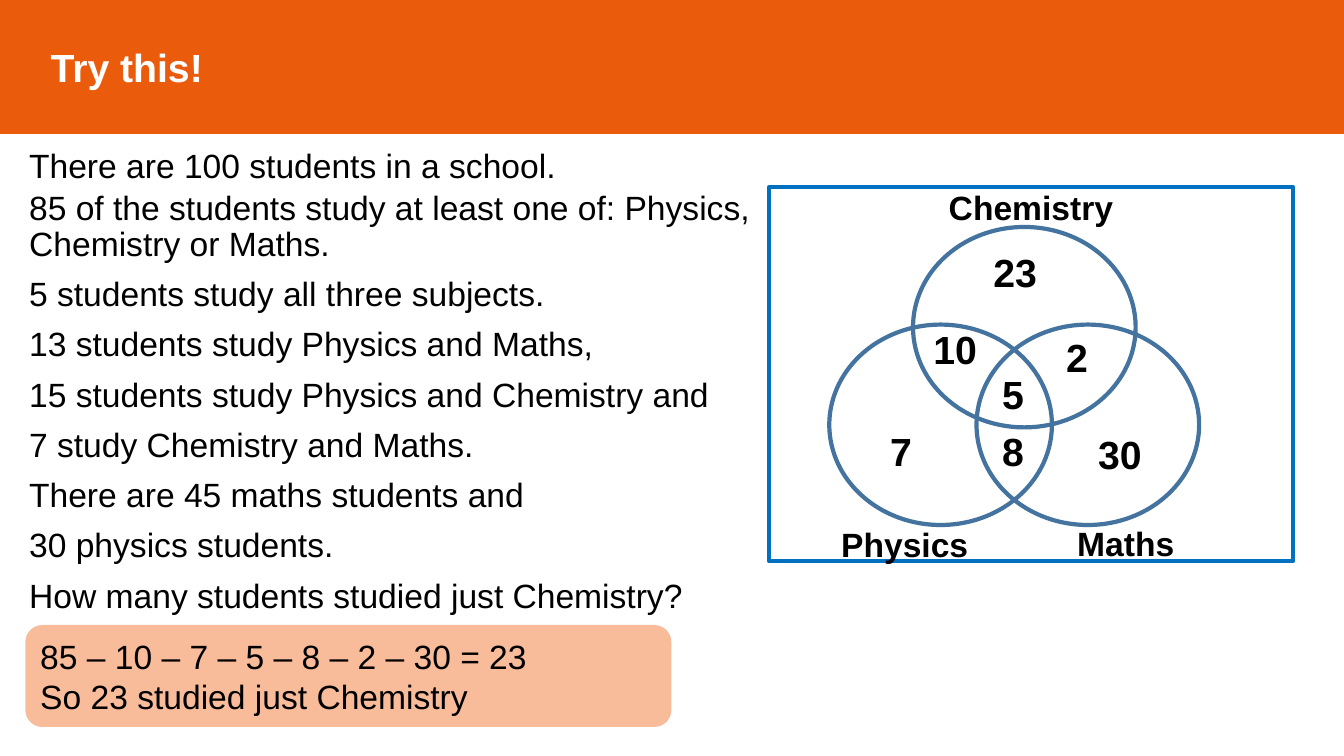
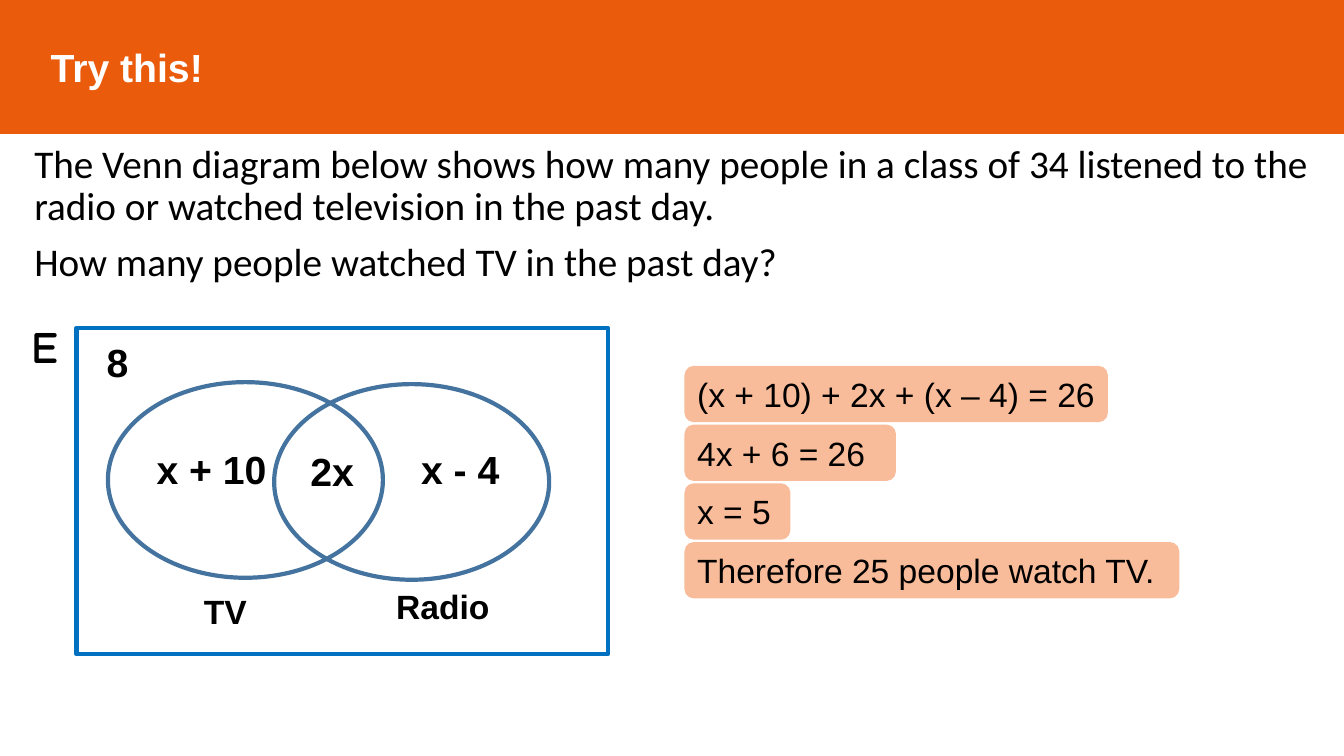
import pptx
import pptx.util
import pptx.dml.color
import pptx.enum.shapes
import pptx.enum.text
import pptx.oxml.ns
import lxml.etree

Cm, Pt = pptx.util.Cm, pptx.util.Pt
MSO = pptx.enum.shapes.MSO_SHAPE
ALIGN = pptx.enum.text.PP_ALIGN
MIDDLE = pptx.enum.text.MSO_ANCHOR.MIDDLE

ORANGE, PEACH, BLUE, STEEL = "EA5B0C", "F9BC9A", "0070C0", "43739E"
BLACK, WHITE = "000000", "FFFFFF"
WIDTH, HEIGHT, BAND = 33.87, 19.05, 3.35

SLIDES = [
    {
        "title": "Try this!",
        "body": {
            "box": (0.48, 3.63, 19.53, 12.1), "size": 24, "font": "Arial",
            "lines": [
                ("There are 100 students in a school.", 10),
                ("85 of the students study at least one of: Physics, Chemistry or Maths.", 4),
                ("5 students study all three subjects.", 10),
                ("13 students study Physics and Maths,", 10),
                ("15 students study Physics and Chemistry and", 10),
                ("7 study Chemistry and Maths.", 10),
                ("There are 45 maths students and", 10),
                ("30 physics students.", 10),
                ("How many students studied just Chemistry?", 10),
            ],
        },
        "frame": (19.38, 4.72, 13.21, 9.42),
        "set_size": (5.61, 5.05),
        "sets": [(20.9, 8.18), (24.61, 8.18), (23.01, 5.72)],
        "names": [("Chemistry", 25.98, 5.21), ("Physics", 22.8, 13.7), ("Maths", 28.37, 13.68)],
        "values": [
            ("23", 25.58, 6.85), ("10", 24.07, 8.78), ("2", 27.14, 8.98), ("5", 25.53, 9.92),
            ("8", 25.53, 11.37), ("7", 22.71, 11.37), ("30", 28.22, 11.44),
        ],
        "universe": [],
        "answer_at": (0.64, 15.75),
        "answer_height": 2.57,
        "answers": [(["85 – 10 – 7 – 5 – 8 – 2 – 30 = 23", "So 23 studied just Chemistry"], 16.28)],
    },
    {
        "title": "Try this!",
        "body": {
            "box": (0.61, 3.51, 33.26, 3.73), "size": 28, "font": "Calibri",
            "lines": [
                ("The Venn diagram below shows how many people in a class of 34 listened "
                 "to the radio or watched television in the past day.", 10),
                ("How many people watched TV in the past day?", 10),
            ],
        },
        "frame": (1.93, 8.26, 13.39, 8.23),
        "set_size": (6.93, 4.93),
        "sets": [(2.72, 9.63), (6.91, 9.68)],
        "names": [("TV", 5.68, 15.39), ("Radio", 11.16, 15.27)],
        "values": [("8", 2.96, 9.13), ("x + 10", 5.33, 11.82), ("2x", 8.37, 11.87), ("x - 4", 11.6, 11.82)],
        "universe": [("E", 1.14, 8.71)],
        "answer_at": (17.25, 9.22),
        "answer_height": 1.42,
        "answers": [
            (["(x + 10) + 2x + (x – 4) = 26"], 10.67),
            (["4x + 6 = 26"], 5.33),
            (["x = 5"], 2.67),
            (["Therefore 25 people watch TV."], 12.47),
        ],
    },
]
ANSWER_GAP = 0.06
LABEL_STYLES = {
    "names": {"size": Pt(24), "name": "Arial", "bold": True},
    "values": {"size": Pt(28), "name": "Arial", "bold": True},
    "universe": {"size": Pt(32), "name": "Comic Neue", "bold": True},
}


def rgb(value):
    return pptx.dml.color.RGBColor.from_string(value)


def apply(obj, formats):
    for key, value in formats.items():
        setattr(obj, key, value)


def place(sp, box):
    apply(sp, dict(zip(("left", "top", "width", "height"), map(Cm, box))))


def write(tf, lines, font, color=BLACK, para=None):
    apply(tf, {"word_wrap": True, "auto_size": pptx.enum.text.MSO_AUTO_SIZE.NONE})
    for i, line in enumerate(lines):
        p = tf.paragraphs[0] if i == 0 else tf.add_paragraph()
        apply(p, para or {})
        r = p.add_run()
        r.text = line
        apply(r.font, font)
        r.font.color.rgb = rgb(color)


def add_shape(s, kind, box, fill=None, line=None, weight=3):
    sp = s.shapes.add_shape(kind, *map(Cm, box))
    sp.shadow.inherit = False
    paint(sp, fill, line, weight)
    return sp


def paint(sp, fill, line, weight):
    if fill:
        sp.fill.solid()
        sp.fill.fore_color.rgb = rgb(fill)
    else:
        sp.fill.background()
    if line:
        sp.line.color.rgb = rgb(line)
        sp.line.width = Pt(weight)
    else:
        sp.line.fill.background()


def add_title(s, text):
    sp = s.shapes.title
    place(sp, (0, 0, WIDTH, BAND))
    paint(sp, ORANGE, ORANGE, 1)
    tf = sp.text_frame
    tf.vertical_anchor = MIDDLE
    write(tf, [text], {"size": Pt(28), "name": "Arial", "bold": True}, WHITE, {"alignment": ALIGN.LEFT})
    tf.paragraphs[0]._p.get_or_add_pPr().set("marL", str(Cm(1.02)))


def add_body(s, body):
    sp = s.placeholders[1]
    place(sp, body["box"])
    tf = sp.text_frame
    write(tf, [text for text, _ in body["lines"]],
          {"size": Pt(body["size"]), "name": body["font"]}, para={"line_spacing": 0.9})
    for p, (_, before) in zip(tf.paragraphs, body["lines"]):
        p.space_before = Pt(before)
        pPr = p._p.get_or_add_pPr()
        pPr.set("marL", "0")
        pPr.set("indent", "0")
        lxml.etree.SubElement(pPr, pptx.oxml.ns.qn("a:buNone"))


def add_label(s, text, cx, cy, font, width=6, height=1.4):
    box = (cx - width / 2, cy - height / 2, width, height)
    tf = s.shapes.add_textbox(*map(Cm, box)).text_frame
    apply(tf, {"vertical_anchor": MIDDLE, "margin_left": 0, "margin_right": 0})
    write(tf, [text], font, para={"alignment": ALIGN.CENTER})


def add_venn(s, data):
    add_shape(s, MSO.RECTANGLE, data["frame"], line=BLUE)
    for corner in data["sets"]:
        add_shape(s, MSO.OVAL, corner + data["set_size"], line=STEEL)
    for group, font in LABEL_STYLES.items():
        for text, cx, cy in data[group]:
            width = 1.5 if group == "universe" else 6
            add_label(s, text, cx, cy, font, width)


def add_answers(s, data):
    left, top = data["answer_at"]
    height = data["answer_height"]
    for i, (lines, width) in enumerate(data["answers"]):
        box = (left, top + i * (height + ANSWER_GAP), width, height)
        sp = add_shape(s, MSO.ROUNDED_RECTANGLE, box, fill=PEACH)
        sp.text_frame.vertical_anchor = MIDDLE
        write(sp.text_frame, lines, {"size": Pt(24), "name": "Arial"}, para={"alignment": ALIGN.LEFT})


def main():
    prs = pptx.Presentation()
    apply(prs, {"slide_width": Cm(WIDTH), "slide_height": Cm(HEIGHT)})
    for data in SLIDES:
        s = prs.slides.add_slide(prs.slide_layouts[1])
        add_title(s, data["title"])
        add_body(s, data["body"])
        add_venn(s, data)
        add_answers(s, data)
    prs.save("out.pptx")


if __name__ == "__main__":
    main()
